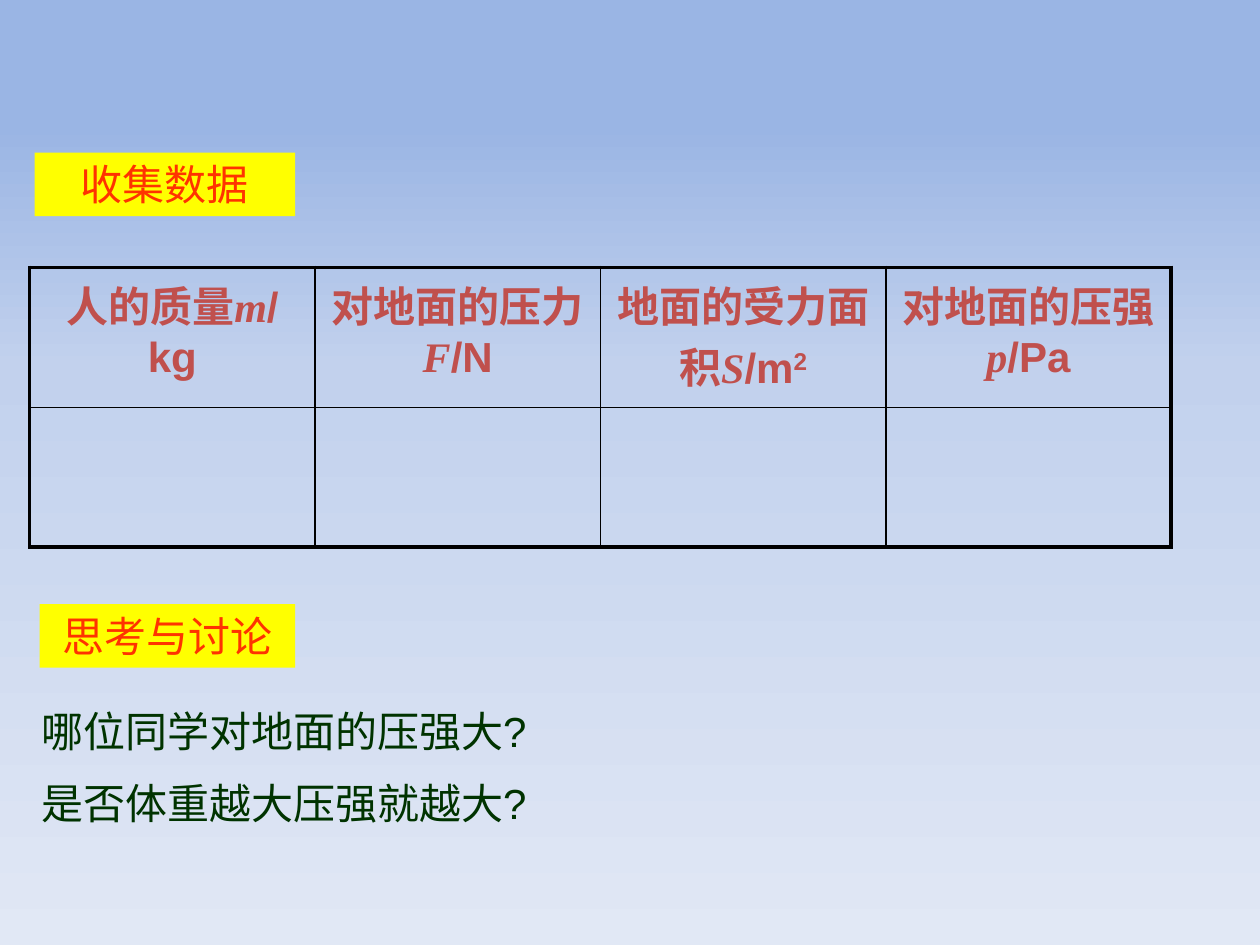
from lxml import etree
from pptx import Presentation
from pptx import util as u
from pptx.dml.color import RGBColor
from pptx.enum import shapes, text
from pptx.oxml import parse_xml
from pptx.oxml.ns import nsdecls, qn

COLORS = {
    "sky": "9AB5E4", "mist": "C2D1ED", "pale": "E1E8F5",
    "label": "FFFF00", "label_text": "FF3300",
    "header": "C0504D", "question": "003300", "border": "000000",
}
THICK, THIN = 2.25, 1


def add_text(para, content, color, font="Arial", size=24, bold=False,
             italic=False, raised=False):
    span = para.add_run()
    span.text = content
    span.font.name = font
    span.font.size = u.Pt(size)
    span.font.bold = bold
    span.font.italic = italic
    span.font.color.rgb = RGBColor.from_string(COLORS[color])
    if raised:
        span.font._element.set("baseline", "30000")


class Slide:
    def __init__(self, deck):
        self.page = deck.slides.add_slide(deck.slide_layouts[6])

    def background(self, stops):
        marks = "".join(
            f'<a:gs pos="{place * 1000}"><a:srgbClr val="{COLORS[color]}"/></a:gs>'
            for place, color in stops)
        self.page._element.cSld.insert(0, parse_xml(
            f'<p:bg {nsdecls("p", "a")}><p:bgPr><a:gradFill rotWithShape="1">'
            f'<a:gsLst>{marks}</a:gsLst><a:lin ang="5400000" scaled="0"/>'
            '</a:gradFill><a:effectLst/></p:bgPr></p:bg>'))

    def label(self, content, left, top, width):
        box = self.page.shapes.add_shape(
            shapes.MSO_SHAPE.RECTANGLE,
            u.Cm(left), u.Cm(top), u.Cm(width), u.Cm(1.28))
        box.shadow.inherit = False
        box.fill.solid()
        box.fill.fore_color.rgb = RGBColor.from_string(COLORS["label"])
        box.line.fill.background()
        box.text_frame.vertical_anchor = text.MSO_ANCHOR.TOP
        para = box.text_frame.paragraphs[0]
        para.alignment = text.PP_ALIGN.CENTER
        add_text(para, content, "label_text")

    def paragraphs(self, lines, left, top, width, height):
        box = self.page.shapes.add_textbox(
            u.Cm(left), u.Cm(top), u.Cm(width), u.Cm(height))
        frame = box.text_frame
        frame.word_wrap = True
        for index, line in enumerate(lines):
            para = frame.add_paragraph() if index else frame.paragraphs[0]
            if index:
                para.space_before = u.Pt(12)
            add_text(para, line, "question")

    def table(self, headers, row_count, left, top, width, height):
        columns = len(headers)
        table = self.page.shapes.add_table(
            row_count, columns,
            u.Cm(left), u.Cm(top), u.Cm(width), u.Cm(height)).table
        table.first_row = table.horz_banding = False
        for row in range(row_count):
            for column in range(columns):
                cell = table.cell(row, column)
                cell.fill.background()
                self.borders(cell, {
                    "lnL": column == 0, "lnR": column == columns - 1,
                    "lnT": row == 0, "lnB": row == row_count - 1})
        for column, (name, symbol, unit, power) in enumerate(headers):
            para = table.cell(0, column).text_frame.paragraphs[0]
            para.alignment = text.PP_ALIGN.CENTER
            add_text(para, name, "header", bold=True)
            add_text(para, symbol, "header", font="Times New Roman",
                     bold=True, italic=True)
            add_text(para, unit, "header", bold=True)
            if power:
                add_text(para, power, "header", bold=True, raised=True)

    def borders(self, cell, sides):
        properties = cell._tc.get_or_add_tcPr()
        for index, (side, outer) in enumerate(sides.items()):
            line = etree.Element(qn(f"a:{side}"))
            line.set("w", str(u.Pt(THICK if outer else THIN)))
            fill = etree.SubElement(line, qn("a:solidFill"))
            etree.SubElement(fill, qn("a:srgbClr")).set("val", COLORS["border"])
            properties.insert(index, line)


def main():
    deck = Presentation()
    deck.slide_width, deck.slide_height = u.Cm(25.4), u.Cm(19.05)
    slide = Slide(deck)
    slide.background([(13, "sky"), (39, "mist"), (100, "pale")])

    # Data collection
    slide.label("收集数据", 0.7, 3.08, 5.25)
    slide.table([
        ("人的质量", "m", "/kg", ""),
        ("对地面的压力", "F", "/N", ""),
        ("地面的受力面积", "S", "/m", "2"),
        ("对地面的压强", "p", "/Pa", ""),
    ], 2, 0.6, 5.39, 23.01, 5.64)

    # Discussion
    slide.label("思考与讨论", 0.8, 12.18, 5.15)
    slide.paragraphs(["哪位同学对地面的压强大?", "是否体重越大压强就越大?"],
                     0.58, 14.1, 23.4, 2.82)
    deck.save("out.pptx")


if __name__ == "__main__":
    main()
